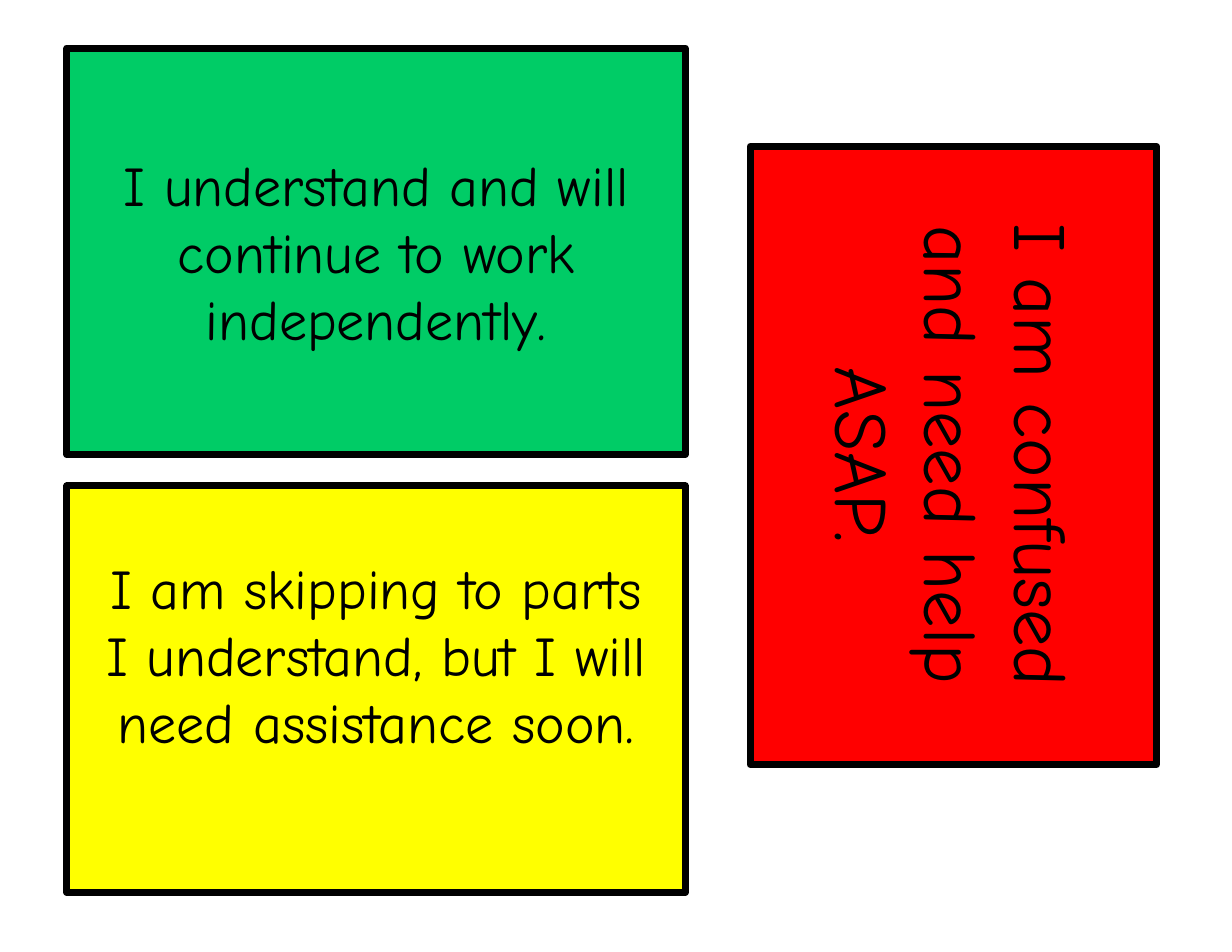
from pptx import Presentation
from pptx.dml.color import RGBColor
from pptx.enum.shapes import MSO_SHAPE as Shape
from pptx.enum.text import MSO_ANCHOR as Anchor, PP_ALIGN as Align
from pptx.util import Cm, Pt

CARD_WIDTH, CARD_HEIGHT = 14.02, 9.22
LABEL_WIDTH = 12.88


def color(value):
    return RGBColor.from_string(value)


class CardSheet:
    font = "Comic Neue"
    ink = "000000"
    border = 4.5

    def __init__(self, slide):
        self.slide = slide

    def panel(self, group, left, top, fill, rotation):
        shape = group.shapes.add_shape(
            Shape.RECTANGLE, Cm(left), Cm(top), Cm(CARD_WIDTH), Cm(CARD_HEIGHT))
        shape.shadow.inherit = False
        shape.fill.solid()
        shape.fill.fore_color.rgb = color(fill)
        shape.line.color.rgb = color(self.ink)
        shape.line.width = Pt(self.border)
        shape.rotation = rotation

    def label(self, group, left, top, height, text, size, fill, rotation):
        shape = group.shapes.add_textbox(
            Cm(left), Cm(top), Cm(LABEL_WIDTH), Cm(height))
        if fill:
            shape.fill.solid()
            shape.fill.fore_color.rgb = color(fill)
        shape.rotation = rotation
        frame = shape.text_frame
        frame.word_wrap = True
        frame.vertical_anchor = Anchor.TOP
        frame.text = text
        paragraph = frame.paragraphs[0]
        paragraph.alignment = Align.CENTER
        font = paragraph.runs[0].font
        font.name = self.font
        font.size = Pt(size)
        font.color.rgb = color(self.ink)

    def card(self, left, top, fill, text, size=36, label_offset=1.4,
             label_height=6.4, label_fill=None, rotation=0):
        group = self.slide.shapes.add_group_shape()
        self.panel(group, left, top, fill, rotation)
        label_left = left + (CARD_WIDTH - LABEL_WIDTH) / 2
        self.label(group, label_left, top + label_offset, label_height,
                   text, size, label_fill, rotation)


def main():
    presentation = Presentation()
    presentation.slide_width = Cm(27.94)
    presentation.slide_height = Cm(21.59)
    sheet = CardSheet(presentation.slides.add_slide(presentation.slide_layouts[6]))

    sheet.card(1.52, 1.09, "00CC66",
               "I understand and will continue to work independently.",
               label_offset=2.19, label_height=4.88)
    sheet.card(1.52, 11.02, "FFFF00",
               "I am skipping to parts I understand, but I will need assistance soon.",
               label_fill="FFFF00")
    sheet.card(14.61, 5.72, "FF0000", "I am confused and need help ASAP.",
               size=48, label_fill="FF0000", rotation=90)

    presentation.save("out.pptx")


if __name__ == "__main__":
    main()
